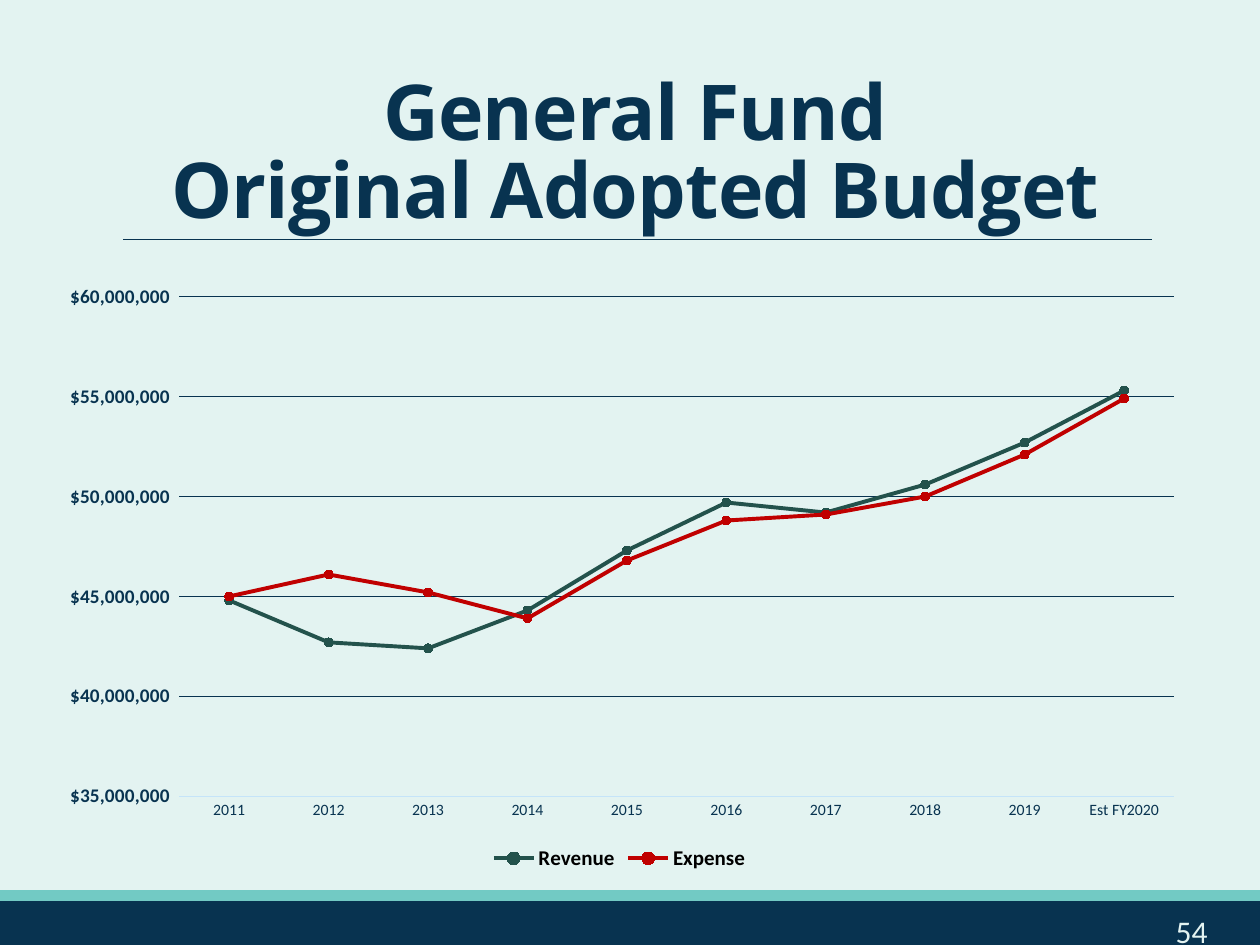
from lxml import etree
from pptx import Presentation
from pptx.chart.data import CategoryChartData
from pptx.dml.color import RGBColor
from pptx.enum import chart as ch, shapes, text
from pptx.oxml import parse_xml
from pptx.oxml.ns import nsdecls, qn
from pptx.util import Pt

NAVY = RGBColor(0x08, 0x33, 0x50)
TEAL = RGBColor(0x72, 0xCA, 0xC4)
MINT = RGBColor(0xE3, 0xF3, 0xF1)
PALE_BLUE = RGBColor(0xC5, 0xE4, 0xF9)
GREEN = RGBColor(0x23, 0x52, 0x4C)
RED = RGBColor(0xC0, 0x00, 0x00)
BLACK = RGBColor(0x00, 0x00, 0x00)

WIDTH, HEIGHT = 720, 540
MILLION = 1_000_000
DOLLARS = '"$"#,##0_)'
YEARS = [str(year) for year in range(2011, 2020)] + ["Est FY2020"]
BUDGET = [
    ("Revenue", GREEN, [44.8, 42.7, 42.4, 44.3, 47.3, 49.7, 49.2, 50.6, 52.7, 55.3]),
    ("Expense", RED, [45.0, 46.1, 45.2, 43.9, 46.8, 48.8, 49.1, 50.0, 52.1, 54.9]),
]


def set_font(font, name, size, color, bold=False):
    font.name, font.size, font.bold = name, Pt(size), bold
    font.color.rgb = color


def add_title(slide, x, y, w, h):
    """Place the two-line title with a thin rule at its foot."""
    sp = slide.shapes.title
    sp.left, sp.top, sp.width, sp.height = Pt(x), Pt(y), Pt(w), Pt(h)
    tf = sp.text_frame
    tf.word_wrap = True
    tf.auto_size = text.MSO_AUTO_SIZE.NONE
    tf.vertical_anchor = text.MSO_ANCHOR.BOTTOM
    tf.margin_top = tf.margin_bottom = Pt(3.6)
    p = tf.paragraphs[0]
    p.alignment = text.PP_ALIGN.CENTER
    p.line_spacing = 0.85
    for i, line in enumerate(("General Fund", "Original Adopted Budget")):
        if i:
            p.add_line_break()
        r = p.add_run()
        r.text = line
        set_font(r.font, "Open Sans", 44, NAVY, True)
        r.font._element.set("spc", "-50")

    rule_y = Pt(y + h - 0.8)
    rule = slide.shapes.add_connector(
        shapes.MSO_CONNECTOR.STRAIGHT, Pt(x + 10.5), rule_y, Pt(x + w - 7.5), rule_y)
    rule.line.color.rgb = NAVY
    rule.line.width = Pt(0.5)
    etree.SubElement(rule._element.spPr, qn("a:effectLst"))


def set_plot_area(chart, x, y, w, h):
    """Fix the inner plot area, in fractions of the chart."""
    plot_area = chart._chartSpace.chart.plotArea
    for old in plot_area.findall(qn("c:layout")):
        plot_area.remove(old)
    parts = "".join(f'<c:{tag} val="{val}"/>' for tag, val in (
        ("layoutTarget", "inner"), ("xMode", "edge"), ("yMode", "edge"),
        ("x", x), ("y", y), ("w", w), ("h", h)))
    plot_area.insert(0, parse_xml(
        f'<c:layout {nsdecls("c")}><c:manualLayout>{parts}</c:manualLayout></c:layout>'))


def add_budget_chart(slide, x, y, w, h):
    data = CategoryChartData(number_format=DOLLARS)
    data.categories = YEARS
    for name, _, values in BUDGET:
        data.add_series(name, [round(v * MILLION) for v in values])
    chart = slide.shapes.add_chart(
        ch.XL_CHART_TYPE.LINE_MARKERS, Pt(x), Pt(y), Pt(w), Pt(h), data).chart
    set_font(chart.font, "Calibri", 10, NAVY)
    chart.has_title = False
    set_plot_area(chart, 0.119, 0.038, 0.861, 0.83)

    chart.has_legend = True
    chart.legend.position = ch.XL_LEGEND_POSITION.BOTTOM
    chart.legend.include_in_layout = False
    set_font(chart.legend.font, "Calibri", 12, BLACK, True)

    years, dollars = chart.category_axis, chart.value_axis
    for axis, size, bold in ((years, 9, False), (dollars, 11, True)):
        axis.major_tick_mark = axis.minor_tick_mark = ch.XL_TICK_MARK.NONE
        set_font(axis.tick_labels.font, "Calibri", size, NAVY, bold)
    years.format.line.color.rgb = PALE_BLUE
    years.format.line.width = Pt(0.75)
    dollars.format.line.fill.background()
    dollars.minimum_scale = 35 * MILLION
    dollars.maximum_scale = 60 * MILLION
    dollars.major_unit = 5 * MILLION
    dollars.tick_labels.number_format = DOLLARS
    dollars.tick_labels.number_format_is_linked = False
    dollars.major_gridlines.format.line.color.rgb = NAVY
    dollars.major_gridlines.format.line.width = Pt(0.75)

    chart.plots[0].vary_by_categories = False
    for series, (_, color, _) in zip(chart.plots[0].series, BUDGET):
        series.smooth = False
        series.format.line.color.rgb = color
        series.format.line.width = Pt(2.25)
        marker = series.marker
        marker.style = ch.XL_MARKER_STYLE.CIRCLE
        marker.size = 5
        marker.format.fill.solid()
        marker.format.fill.fore_color.rgb = color
        marker.format.line.color.rgb = color


def add_footer(slide, x, y, w, h):
    """Draw a teal strip over a navy band that holds the slide number."""
    strip = 5.5
    for top, height, color in ((y + strip, h - strip, NAVY), (y, strip, TEAL)):
        band = slide.shapes.add_shape(
            shapes.MSO_SHAPE.RECTANGLE, Pt(x), Pt(top), Pt(w), Pt(height))
        band.shadow.inherit = False
        band.fill.solid()
        band.fill.fore_color.rgb = color
        band.line.color.rgb = color
        band.line.width = Pt(1.25)

    number = slide.shapes.add_textbox(Pt(x + w - 78), Pt(y + 8.5), Pt(78), Pt(h - 8.5))
    tf = number.text_frame
    tf.word_wrap = True
    p = tf.paragraphs[0]
    p.alignment = text.PP_ALIGN.CENTER
    r = p.add_run()
    r.text = "54"
    set_font(r.font, "Calibri", 18, MINT)


def main():
    prs = Presentation()
    prs.slide_width, prs.slide_height = Pt(WIDTH), Pt(HEIGHT)
    slide = prs.slides.add_slide(prs.slide_layouts[5])
    slide.background.fill.solid()
    slide.background.fill.fore_color.rgb = MINT
    add_footer(slide, 0, 509, WIDTH, HEIGHT - 509)
    add_title(slide, 60, 60, 606, 77.5)
    add_budget_chart(slide, 24, 156.5, 660, 344)
    prs.save("out.pptx")


if __name__ == "__main__":
    main()
